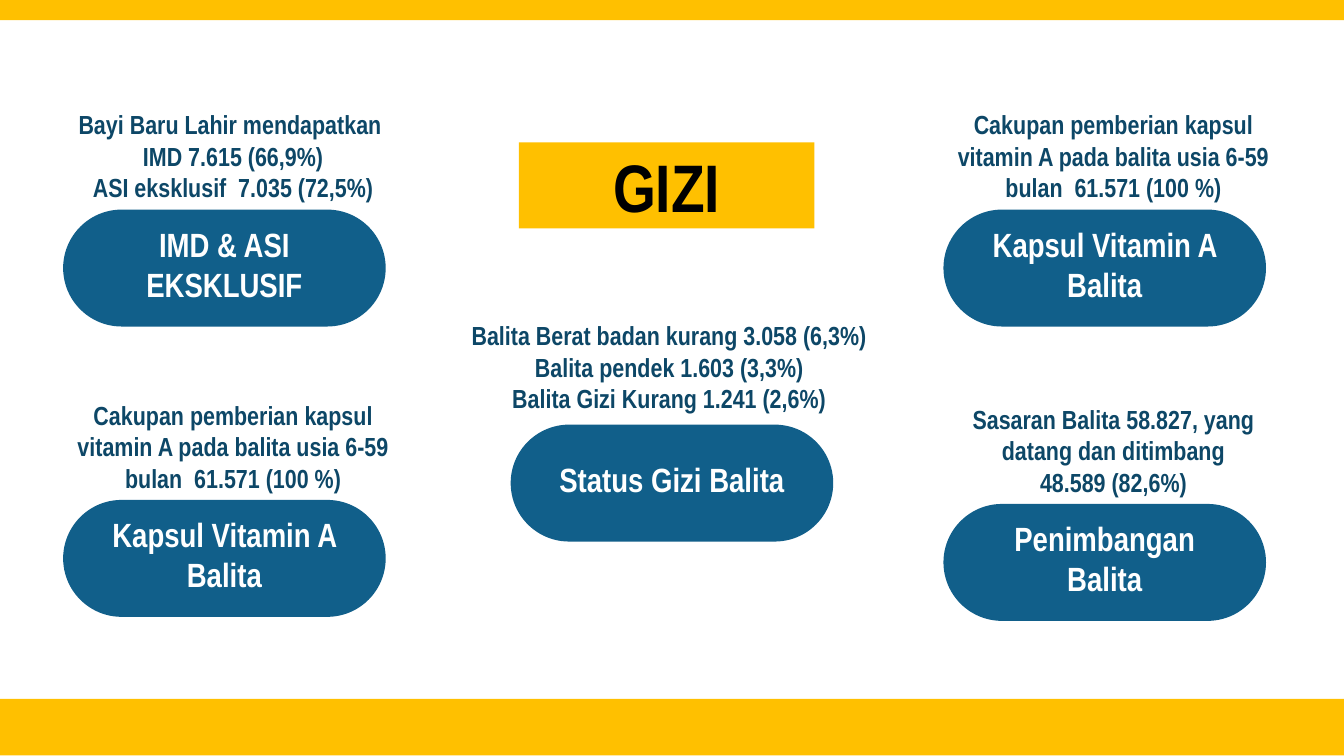
"""Build the GIZI slide: five child nutrition indicators around a title."""
import pptx
import pptx.dml.color
import pptx.enum.shapes
import pptx.enum.text
import pptx.util

Inches = pptx.util.Inches
Pt = pptx.util.Pt
RGB = pptx.dml.color.RGBColor.from_string
SHAPES = pptx.enum.shapes.MSO_SHAPE

THEME = {
    "band": RGB("FFC000"),
    "pill": RGB("115F8A"),
    "title": {"name": "Arial Narrow", "size": Pt(36), "bold": True, "color": RGB("000000")},
    "label": {"name": "Arial Narrow", "size": Pt(18), "bold": True, "color": RGB("FFFFFF")},
    "figures": {"name": "Arial Narrow", "size": Pt(14), "bold": True, "color": RGB("0D4767")},
}
FRAME = {
    "word_wrap": True,
    "auto_size": pptx.enum.text.MSO_AUTO_SIZE.NONE,
    "vertical_anchor": pptx.enum.text.MSO_ANCHOR.MIDDLE,
    "margin_left": Inches(0.1),
    "margin_right": Inches(0.1),
    "margin_top": Inches(0.1),
    "margin_bottom": Inches(0.1),
}
PILL_FRAME = FRAME | {"margin_top": 0, "margin_bottom": Inches(0.06)}


def write(holder, lines, style, frame_format=FRAME):
    frame = holder.text_frame
    for attribute, value in frame_format.items():
        setattr(frame, attribute, value)
    frame.text = "\n".join(lines)
    for paragraph in frame.paragraphs:
        paragraph.alignment = pptx.enum.text.PP_ALIGN.CENTER
        font = paragraph.runs[0].font
        for attribute, value in THEME[style].items():
            if attribute == "color":
                font.color.rgb = value
            else:
                setattr(font, attribute, value)


def add_block(kind, box, color):
    block = slide.shapes.add_shape(kind, *map(Inches, box))
    block.shadow.inherit = False
    block.fill.solid()
    block.fill.fore_color.rgb = color
    block.line.fill.background()
    return block


presentation = pptx.Presentation()
presentation.slide_width = Inches(10)
presentation.slide_height = Inches(10 * 9 / 16)
slide = presentation.slides.add_slide(presentation.slide_layouts[5])

heading = slide.shapes.title
heading_box = {"left": 3.86, "top": 1.06, "width": 2.2, "height": 0.64}
for attribute, length in heading_box.items():
    setattr(heading, attribute, Inches(length))
heading.fill.solid()
heading.fill.fore_color.rgb = THEME["band"]
write(heading, ["GIZI"], "title")

LEFT, CENTER, RIGHT = 0.47, 3.8, 7.02
SIDE_NOTE = (-0.11, -0.59, 2.75)
CENTER_NOTE = (-0.39, -0.62, 3.14)
vitamin_figures = [
    "Cakupan pemberian kapsul vitamin A pada balita usia 6-59",
    "bulan  61.571 (100 %)",
]
indicators = [
    (LEFT, 1.56, SIDE_NOTE, "IMD & ASI EKSKLUSIF",
     ["Bayi Baru Lahir mendapatkan ", "IMD 7.615 (66,9%)", "ASI eksklusif  7.035 (72,5%)"]),
    (LEFT, 3.72, SIDE_NOTE, "Kapsul Vitamin A Balita", vitamin_figures),
    (RIGHT, 1.56, SIDE_NOTE, "Kapsul Vitamin A Balita", vitamin_figures),
    (RIGHT, 3.75, SIDE_NOTE, "Penimbangan Balita",
     ["Sasaran Balita 58.827, yang datang dan ditimbang", "48.589 (82,6%)"]),
    (CENTER, 3.16, CENTER_NOTE, "Status Gizi Balita",
     ["Balita Berat badan kurang 3.058 (6,3%)", "Balita pendek 1.603 (3,3%)",
      "Balita Gizi Kurang 1.241 (2,6%)"]),
]
for left, top, (shift_x, shift_y, note_width), label, figures in indicators:
    pill = add_block(SHAPES.ROUNDED_RECTANGLE, (left, top, 2.4, 0.87), THEME["pill"])
    pill.adjustments[0] = 0.5
    write(pill, [label], "label", PILL_FRAME)
    note_box = (left + shift_x, top + shift_y, note_width, 0.38)
    note = slide.shapes.add_textbox(*map(Inches, note_box))
    write(note, figures, "figures")

for band_top, band_height in [(5.2, 0.42), (-0.01, 0.16)]:
    add_block(SHAPES.RECTANGLE, (0, band_top, 10, band_height), THEME["band"])

presentation.save("out.pptx")
